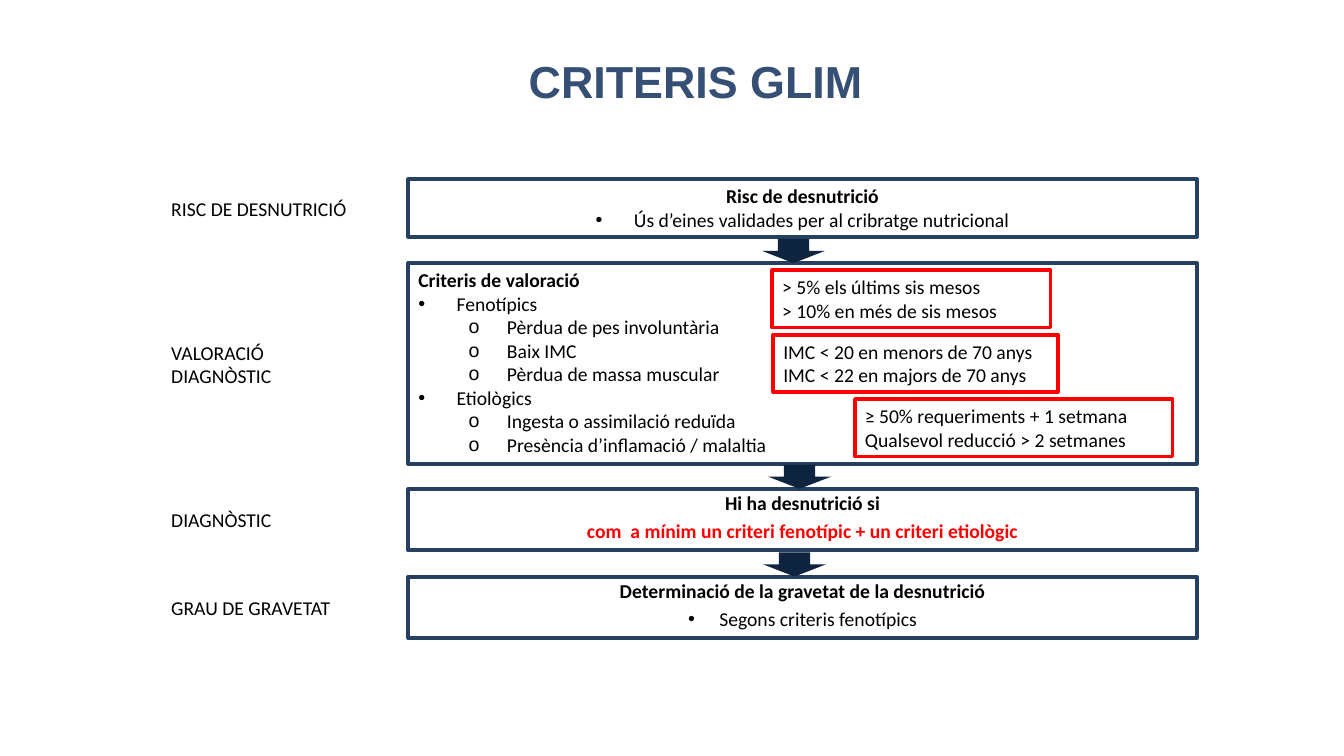
import pptx
import pptx.dml.color
import pptx.enum.shapes
import pptx.enum.text
import pptx.oxml
import pptx.oxml.ns
import pptx.util

RGB = pptx.dml.color.RGBColor
NAVY = RGB(0x25, 0x40, 0x61)
DARK = RGB(0x0F, 0x24, 0x3E)
SLATE = RGB(0x36, 0x4F, 0x74)
RED = RGB(0xFF, 0x00, 0x00)
BLACK = RGB(0x00, 0x00, 0x00)

SHAPE = pptx.enum.shapes.MSO_SHAPE
ALIGN = pptx.enum.text.PP_ALIGN
ANCHOR = pptx.enum.text.MSO_ANCHOR
FIT = pptx.enum.text.MSO_AUTO_SIZE
PX = 9144


def px(*nums):
    return [pptx.util.Emu(num * PX) for num in nums]


def write(par, text, size=14, font="Calibri", color=BLACK, bold=False,
          align=ALIGN.LEFT, mark=None, left=0, hang=0, level=0, loose=False):
    run = par.add_run()
    run.text = text
    run.font.size = pptx.util.Pt(size)
    run.font.name = font
    run.font.color.rgb = color
    run.font.bold = bold
    par.alignment = align
    par.level = level
    if loose:
        par.line_spacing = 0.9
        par.space_after = pptx.util.Pt(5)
    if mark:
        props = par._p.get_or_add_pPr()
        props.set("marL", str(left * PX))
        props.set("indent", str(-hang * PX))
        space = pptx.oxml.ns.nsdecls("a")
        for xml in (f'<a:buFont {space} typeface="Arial"/>',
                    f'<a:buChar {space} char="{mark}"/>'):
            props.append(pptx.oxml.parse_xml(xml))


def fill_text(frame, lines, wrap=True):
    frame.word_wrap = wrap
    frame.auto_size = FIT.SHAPE_TO_FIT_TEXT
    frame.vertical_anchor = ANCHOR.TOP
    for num, (text, form) in enumerate(lines):
        par = frame.add_paragraph() if num else frame.paragraphs[0]
        write(par, text, **form)


def add_title(slide, box, text):
    title = slide.shapes.title
    title.left, title.top, title.width, title.height = px(*box)
    title.text_frame.vertical_anchor = ANCHOR.MIDDLE
    write(title.text_frame.paragraphs[0], text, size=32, font="Arial",
          color=SLATE, bold=True, align=ALIGN.CENTER)


def add_panel(slide, box, color, lines):
    panel = slide.shapes.add_shape(SHAPE.RECTANGLE, *px(*box))
    panel.shadow.inherit = False
    panel.fill.background()
    panel.line.color.rgb = color
    panel.line.width = pptx.util.Pt(2.75)
    fill_text(panel.text_frame, lines)


def add_label(slide, box, lines):
    label = slide.shapes.add_textbox(*px(*box))
    fill_text(label.text_frame, [(text, {}) for text in lines], wrap=False)


def add_arrow(slide, left, base):
    wide, high = 62, 24
    arrow = slide.shapes.add_shape(
        SHAPE.DOWN_ARROW, *px(left, base - high, wide, high))
    arrow.shadow.inherit = False
    arrow.fill.solid()
    arrow.fill.fore_color.rgb = DARK
    arrow.line.fill.background()


def add_step(slide, box, label, size, lines, arrow=None):
    left, top, wide, high = box
    panel_x = left + 245
    add_panel(slide, (panel_x, top, wide - 245, high), NAVY, lines)
    add_label(slide, (left, top + (high - size[1] + 2) // 2, *size), label)
    if arrow is not None:
        add_arrow(slide, panel_x + arrow, top)


def main():
    deck = pptx.Presentation()
    deck.slide_width, deck.slide_height = px(1333, 750)
    slide = deck.slides.add_slide(deck.slide_layouts[5])
    add_title(slide, (60, 36, 1260, 87), "CRITERIS GLIM")

    head = dict(bold=True)
    mid = dict(bold=True, align=ALIGN.CENTER)
    airy = dict(mid, loose=True)
    dot = dict(mark="•", left=38, hang=38)
    ring = dict(mark="o", left=88, hang=38, level=1)
    steps = [
        (178, 57, ["RISC DE DESNUTRICIÓ"], (195, 34), None, [
            ("Risc de desnutrició", mid),
            ("Ús d’eines validades per al cribratge nutricional",
             dict(dot, align=ALIGN.CENTER))]),
        (261, 199, ["VALORACIÓ", "DIAGNÒSTIC"], (120, 57), 351, [
            ("Criteris de valoració", head),
            ("Fenotípics", dot),
            ("Pèrdua de pes involuntària", ring),
            ("Baix IMC", ring),
            ("Pèrdua de massa muscular", ring),
            ("Etiològics", dot),
            ("Ingesta o assimilació reduïda", ring),
            ("Presència d’inflamació / malaltia", ring)]),
        (485, 61, ["DIAGNÒSTIC"], (120, 34), 357, [
            ("Hi ha desnutrició si", airy),
            ("com  a mínim un criteri fenotípic + un criteri etiològic",
             dict(airy, color=RED))]),
        (572, 61, ["GRAU DE GRAVETAT"], (180, 34), 352, [
            ("Determinació de la gravetat de la desnutrició", airy),
            ("Segons criteris fenotípics",
             dict(airy, bold=False, mark="•", left=31, hang=31))]),
    ]
    for top, high, label, size, arrow, lines in steps:
        add_step(slide, (160, top, 1027, high), label, size, lines, arrow)

    notes = [
        (766, 276, ["> 5% els últims sis mesos", "> 10% en més de sis mesos"]),
        (767, 282, ["IMC < 20 en menors de 70 anys",
                    "IMC < 22 en majors de 70 anys"]),
        (848, 315, ["≥ 50% requeriments + 1 setmana",
                    "Qualsevol reducció > 2 setmanes"]),
    ]
    for row, (left, wide, lines) in enumerate(notes):
        add_panel(slide, (left, 268 + 64 * row, wide, 57), RED,
                  [(text, {}) for text in lines])

    deck.save("out.pptx")


if __name__ == "__main__":
    main()
